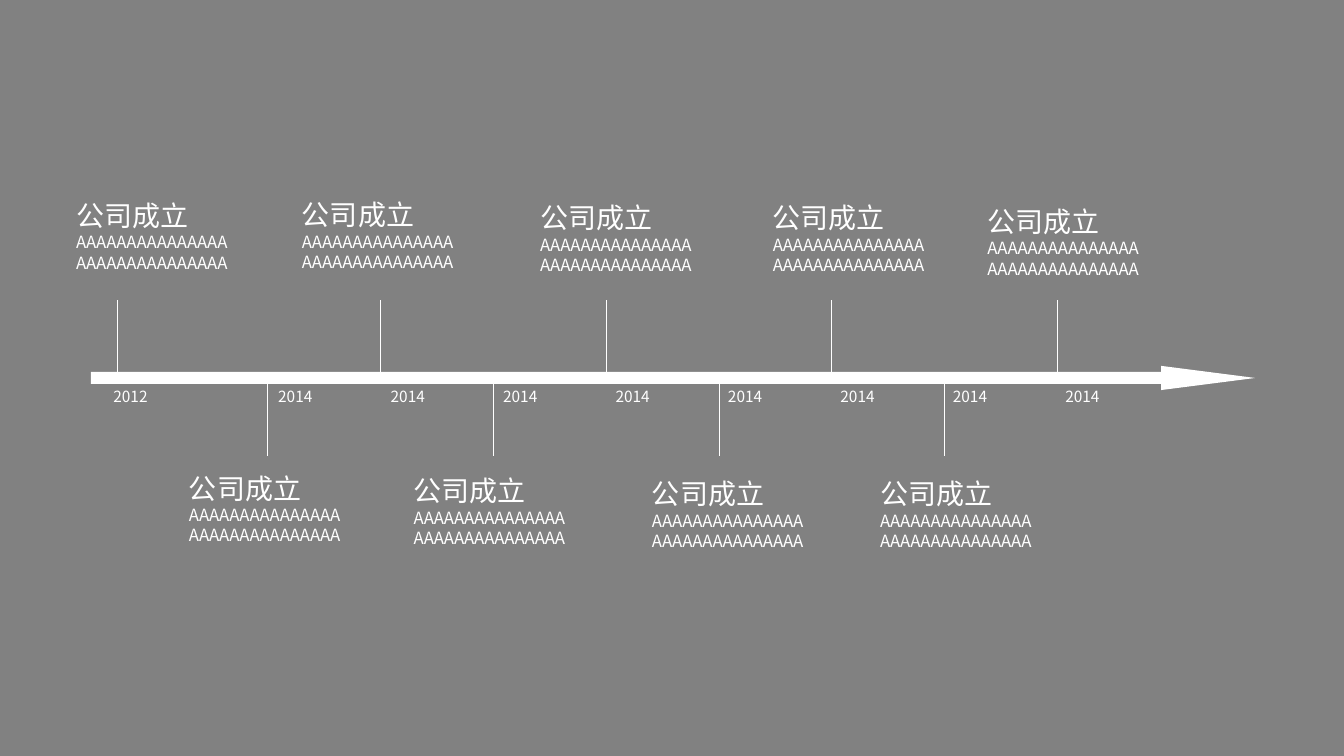
from dataclasses import dataclass

from lxml.etree import SubElement
from pptx import Presentation
from pptx.dml.color import RGBColor
from pptx.enum.shapes import MSO_CONNECTOR as Connector, MSO_SHAPE as Shape
from pptx.enum.text import MSO_AUTO_SIZE as AutoSize
from pptx.oxml.ns import qn
from pptx.util import Inches, Pt


@dataclass(frozen=True)
class Theme:
    font: str = "Noto Sans CJK SC"
    light: RGBColor = RGBColor(0xFF, 0xFF, 0xFF)
    veil: RGBColor = RGBColor(0x26, 0x26, 0x26)
    veil_opacity: int = 58
    heading: int = 20
    body: int = 12
    year: int = 11
    hairline: float = 0.5


class TimelineSlide:
    MARGIN, COLUMN, ROW = 1.53, 1.12, 0.75

    def __init__(self, presentation, theme):
        self.theme = theme
        self.size = presentation.slide_width, presentation.slide_height
        self.slide = presentation.slides.add_slide(presentation.slide_layouts[6])

    def x(self, column):
        return Inches(self.MARGIN + column * self.COLUMN)

    def y(self, row):
        return Inches(row * self.ROW)

    def box(self, column, row, columns, rows):
        return (self.x(column), self.y(row),
                Inches(columns * self.COLUMN), self.y(rows))

    def filled_shape(self, kind, bounds, color):
        shape = self.slide.shapes.add_shape(kind, *bounds)
        shape.shadow.inherit = False
        shape.fill.solid()
        shape.fill.fore_color.rgb = color
        shape.line.fill.background()
        return shape

    def backdrop(self):
        shape = self.filled_shape(Shape.RECTANGLE, (0, 0, *self.size), self.theme.veil)
        color = shape.fill._xPr.find(qn("a:solidFill"))[0]
        SubElement(color, qn("a:alpha"), val=str(self.theme.veil_opacity * 1000))

    def arrow(self, *cells):
        shape = self.filled_shape(Shape.RIGHT_ARROW, self.box(*cells), self.theme.light)
        shape.adjustments[0] = 0.5
        shape.adjustments[1] = 3.89

    def tick(self, column, start_row, end_row):
        line = self.slide.shapes.add_connector(
            Connector.STRAIGHT, self.x(column), self.y(start_row),
            self.x(column), self.y(end_row))
        line.line.color.rgb = self.theme.light
        line.line.width = Pt(self.theme.hairline)
        SubElement(line._element.spPr, qn("a:effectLst"))

    def text(self, cells, content, sizes):
        text_frame = self.slide.shapes.add_textbox(*self.box(*cells)).text_frame
        text_frame.word_wrap = True
        text_frame.auto_size = AutoSize.SHAPE_TO_FIT_TEXT
        text_frame.text = content
        for paragraph, size in zip(text_frame.paragraphs, sizes):
            for run in paragraph.runs:
                run.font.name = self.theme.font
                run.font.size = Pt(size)
                run.font.color.rgb = self.theme.light
                SubElement(run.font._element, qn("a:ea"), typeface=self.theme.font)

    def year(self, column, label):
        self.text((column, 5.05, 0.89, 0.39), label, [self.theme.year])

    def event(self, column, row, heading, body):
        self.text((column, row, 1.56, 1.39), f"{heading}\n{body}",
                  [self.theme.heading, self.theme.body])


AXIS_ROW = 5
TICK_ROWS = 1.03
FIRST_TICK, FIRST_YEAR = -0.33, -0.45
YEAR_START, YEAR_END = 1.01, 7.98
HEADING = "公司成立"
BODY = "A" * 30
EVENT_CELLS = [
    (-0.78, 2.56), (0.22, 6.17), (1.22, 2.55), (2.21, 6.2), (3.33, 2.59),
    (4.32, 6.24), (5.39, 2.59), (6.34, 6.24), (7.29, 2.64),
]


def main():
    presentation = Presentation()
    presentation.slide_width = Inches(13.33)
    presentation.slide_height = Inches(7.5)
    timeline = TimelineSlide(presentation, Theme())
    timeline.backdrop()
    timeline.arrow(-0.56, 4.84, 10.31, 0.32)

    year_step = (YEAR_END - YEAR_START) / (len(EVENT_CELLS) - 2)
    for index, (column, row) in enumerate(EVENT_CELLS):
        direction = -1 if index % 2 == 0 else 1
        rows = sorted((AXIS_ROW, AXIS_ROW + direction * TICK_ROWS))
        timeline.tick(index or FIRST_TICK, *rows)
        if index == 0:
            timeline.year(FIRST_YEAR, "2012")
        else:
            timeline.year(YEAR_START + (index - 1) * year_step, "2014")
        timeline.event(column, row, HEADING, BODY)

    presentation.save("out.pptx")


if __name__ == "__main__":
    main()
